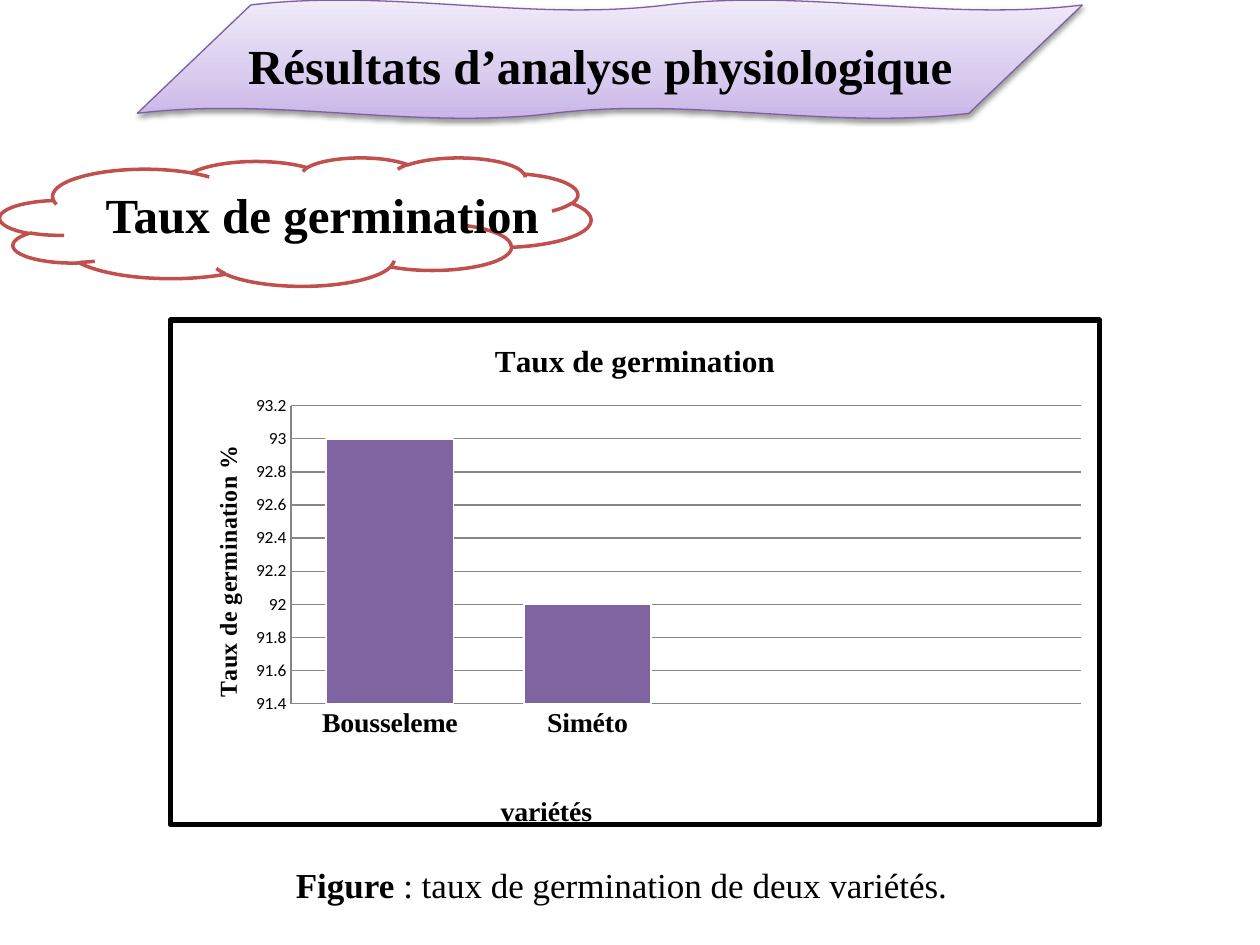
import pptx
import pptx.chart.data
import pptx.dml.color
import pptx.enum.chart
import pptx.enum.shapes
import pptx.enum.text
import pptx.oxml
import pptx.util

Pt = pptx.util.Pt
SHAPE = pptx.enum.shapes.MSO_SHAPE
NS = pptx.oxml.ns.nsdecls("a", "c")
SERIF = "Times New Roman"
GREY = "868686"


def tint(hue):
    """Return the colour for a hex string."""
    return pptx.dml.color.RGBColor.from_string(hue)


def style(font, size, bold=True, face=SERIF, hue="000000"):
    """Set the look of a font."""
    font.size, font.bold, font.name = Pt(size), bold, face
    font.color.rgb = tint(hue)


def write(frame, text, **look):
    """Add a formatted run to the first paragraph of a frame."""
    run = frame.paragraphs[0].add_run()
    run.text = text
    style(run.font, **look)


def edge(line, hue, width):
    """Set the colour and width of a line."""
    line.color.rgb = tint(hue)
    line.width = Pt(width)


def label(slide, box, runs):
    """Place a text box holding pairs of text and look."""
    frame = slide.shapes.add_textbox(*map(Pt, box)).text_frame
    frame.word_wrap = True
    frame.vertical_anchor = pptx.enum.text.MSO_ANCHOR.MIDDLE
    for text, look in runs:
        write(frame, text, **look)


def banner(slide, box, text):
    """Place the shaded wave with the slide title."""
    left, top, width, height = box
    wave = slide.shapes.add_shape(SHAPE.DOUBLE_WAVE, *map(Pt, box))
    wave.adjustments[0], wave.adjustments[1] = 0.043, -0.06
    wave.fill.gradient()
    wave.fill.gradient_angle = 90
    stops = wave.fill.gradient_stops
    for stop, hue, place in zip(stops, ("C9B5E8", "F0EAF9"), (0, 1)):
        stop.color.rgb, stop.position = tint(hue), place
    props = wave.element.spPr
    first = props.find(".//" + pptx.oxml.ns.qn("a:gs"))
    first.addnext(pptx.oxml.parse_xml(
        f'<a:gs {NS} pos="35000"><a:srgbClr val="D8CBEE"/></a:gs>'))
    edge(wave.line, "7D60A0", 0.75)
    wave.shadow.inherit = False
    glow = props.find(pptx.oxml.ns.qn("a:effectLst"))
    glow.append(pptx.oxml.parse_xml(
        f'<a:outerShdw {NS} blurRad="{Pt(3.1)}" dist="{Pt(1.6)}" dir="5400000" '
        'rotWithShape="0"><a:srgbClr val="000000"><a:alpha val="38000"/>'
        '</a:srgbClr></a:outerShdw>'))
    label(slide, (left + 56.2, top + 16.6, width - 56.2, 41),
          [(text, dict(size=28))])


def cloud(slide, box, text):
    """Place the cloud with the section heading."""
    left, top, width, height = box
    puff = slide.shapes.add_shape(SHAPE.CLOUD, *map(Pt, box))
    puff.shadow.inherit = False
    puff.fill.solid()
    puff.fill.fore_color.rgb = tint("FFFFFF")
    edge(puff.line, "C0504D", 2)
    label(slide, (left + 53.3, top + 11.5, width - 70, 41),
          [(text, dict(size=28))])


def layout(x, y, size=None):
    """Return a manual chart layout, with an inner size if given."""
    parts = [("xMode", "edge"), ("yMode", "edge"), ("x", x), ("y", y)]
    if size:
        parts = [("layoutTarget", "inner")] + parts + list(zip("wh", size))
    body = "".join(f'<c:{tag} val="{val}"/>' for tag, val in parts)
    return pptx.oxml.parse_xml(
        f"<c:layout {NS}><c:manualLayout>{body}</c:manualLayout></c:layout>")


def drop(node):
    """Remove the layout that a chart part has."""
    for old in node.findall(pptx.oxml.ns.qn("c:layout")):
        node.remove(old)


def name(title, text, size, spot=None):
    """Write a chart or axis title, at a spot if given."""
    write(title.text_frame, text, size=size)
    if spot:
        node = title._element
        drop(node)
        node.find(pptx.oxml.ns.qn("c:tx")).addnext(layout(*spot))


def graph(slide, box):
    """Place the framed column chart."""
    kinds = pptx.enum.chart
    data = pptx.chart.data.CategoryChartData()
    data.categories = ["Bousseleme", "Siméto", "", ""]
    data.add_series("Taux de germination", (93, 92, None, None))
    chart = slide.shapes.add_chart(
        kinds.XL_CHART_TYPE.COLUMN_STACKED, *map(Pt, box), data).chart
    style(chart.font, 10, False, "Calibri")
    chart.has_legend = False
    chart.has_title = True
    name(chart.chart_title, "Taux de germination", 18)
    plot = chart.plots[0]
    plot.gap_width, plot.overlap, plot.vary_by_categories = 55, 100, False
    bars = plot.series[0].format
    bars.fill.solid()
    bars.fill.fore_color.rgb = tint("8064A2")
    edge(bars.line, "FFFFFF", 1)
    cat, val = chart.category_axis, chart.value_axis
    for axis in (cat, val):
        axis.major_tick_mark = axis.minor_tick_mark = kinds.XL_TICK_MARK.NONE
        edge(axis.format.line, GREY, 0.75)
    style(cat.tick_labels.font, 16)
    val.minimum_scale, val.maximum_scale, val.major_unit = 91.4, 93.2, 0.2
    val.has_major_gridlines = True
    edge(val.major_gridlines.format.line, GREY, 0.75)
    name(cat.axis_title, "variétés", 16, (0.35, 0.93))
    name(val.axis_title, "Taux de germination %", 14, (0.04, 0.25))
    space = chart._chartSpace
    area = space.chart.plotArea
    drop(area)
    area.insert(0, layout(0.13, 0.17, (0.85, 0.59)))
    space.chart.addnext(pptx.oxml.parse_xml(
        f'<c:spPr {NS}><a:solidFill><a:srgbClr val="FFFFFF"/></a:solidFill>'
        f'<a:ln w="{Pt(3)}"><a:solidFill><a:srgbClr val="000000"/></a:solidFill>'
        '</a:ln></c:spPr>'))


def main():
    """Build and save the slide."""
    deck = pptx.Presentation()
    deck.slide_width, deck.slide_height = Pt(720), Pt(540)
    slide = deck.slides.add_slide(deck.slide_layouts[6])
    banner(slide, (78.5, 0, 540, 67.7), "Résultats d’analyse physiologique")
    cloud(slide, (0, 90, 337.7, 73.4), "Taux de germination")
    graph(slide, (95.8, 181.4, 534.2, 296.6))
    label(slide, (162, 489.6, 390, 31.7),
          [("Figure", dict(size=20)),
           (" : taux de germination de deux variétés.",
            dict(size=20, bold=False))])
    deck.save("out.pptx")


if __name__ == "__main__":
    main()
